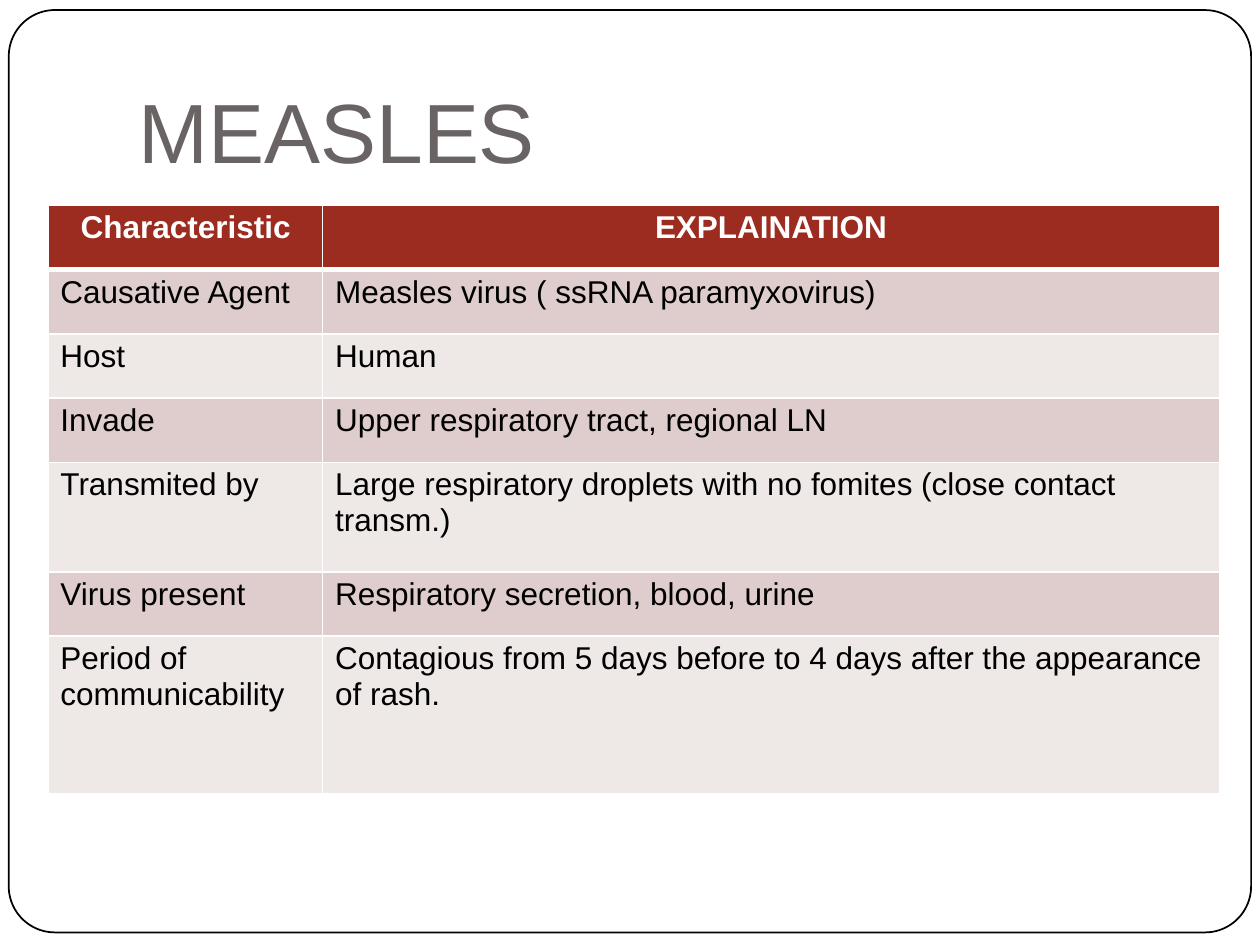
from dataclasses import dataclass
from typing import NamedTuple

from lxml import etree
from pptx import Presentation
from pptx.dml.color import RGBColor
from pptx.enum.shapes import MSO_SHAPE
from pptx.enum.text import PP_ALIGN
from pptx.oxml.ns import qn
from pptx.util import Inches, Pt

ROUNDED = MSO_SHAPE.ROUNDED_RECTANGLE
LEFT, CENTER = PP_ALIGN.LEFT, PP_ALIGN.CENTER


@dataclass(frozen=True)
class Theme:
    font: str = "Arial"
    title_size: float = 48
    body_size: float = 18
    title: str = "696363"
    ink: str = "000000"
    white: str = "FFFFFF"
    header: str = "9B2C1F"
    bands: tuple[str, str] = ("DECDCC", "EEE8E7")
    thin: float = 1
    thick: float = 3


class Row(NamedTuple):
    label: str
    explanation: str
    height: float = 0.51


class CellStyle(NamedTuple):
    fill: str
    color: str
    indent: float = 0.1
    align: PP_ALIGN = LEFT
    bold: bool = False


THEME = Theme()
SLIDE_W, SLIDE_H = 10, 7.5
COLUMNS = (2.18, 7.12)
ROWS = (
    Row("Characteristic", "EXPLAINATION"),
    Row("Causative Agent", "Measles virus ( ssRNA paramyxovirus)"),
    Row("Host", "Human"),
    Row("Invade", "Upper respiratory tract, regional LN"),
    Row("Transmited by",
        "Large respiratory droplets with no fomites (close contact  transm.)", 0.87),
    Row("Virus present", "Respiratory secretion, blood, urine"),
    Row("Period of\ncommunicability",
        "Contagious from 5 days before to 4 days after the appearance\nof rash.", 1.25),
)
HEADER_STYLES = (
    CellStyle(THEME.header, THEME.white, indent=0.26, bold=True),
    CellStyle(THEME.header, THEME.white, indent=0, align=CENTER, bold=True),
)


def write_text(tf, text: str, size: float, color: str, before: float,
               align: PP_ALIGN = LEFT, bold: bool = False) -> None:
    """Write one paragraph per line, with space before the first only."""
    tf.text = text
    for i, p in enumerate(tf.paragraphs):
        p.alignment = align
        p.space_before = Pt(0 if i else before)
        p.font.name = THEME.font
        p.font.size = Pt(size)
        p.font.bold = bold
        p.font.color.rgb = RGBColor.from_string(color)


def set_borders(cell, top: float, bottom: float) -> None:
    """Put white lines round a cell, ahead of its fill as the schema asks."""
    tcPr = cell._tc.get_or_add_tcPr()
    widths = {"a:lnL": THEME.thin, "a:lnR": THEME.thin, "a:lnT": top, "a:lnB": bottom}
    for i, (tag, width) in enumerate(widths.items()):
        ln = etree.Element(qn(tag), w=str(Pt(width)))
        fill = etree.SubElement(ln, qn("a:solidFill"))
        etree.SubElement(fill, qn("a:srgbClr"), val=THEME.white)
        tcPr.insert(i, ln)


def fill_cell(cell, text: str, style: CellStyle) -> None:
    cell.margin_left = Inches(style.indent)
    cell.margin_right = cell.margin_bottom = 0
    cell.margin_top = Inches(0.04)
    cell.fill.solid()
    cell.fill.fore_color.rgb = RGBColor.from_string(style.fill)
    write_text(cell.text_frame, text, THEME.body_size, style.color, 3.1,
               style.align, style.bold)


def add_frame(slide) -> None:
    left, top, width, height = 0.07, 0.08, 9.86, 7.32
    sp = slide.shapes.add_shape(ROUNDED, Inches(left), Inches(top),
                                Inches(width), Inches(height))
    sp.adjustments[0] = 0.05
    sp.shadow.inherit = False
    sp.fill.background()
    sp.line.color.rgb = RGBColor.from_string(THEME.ink)
    sp.line.width = Pt(THEME.thin)


def add_title(slide, text: str) -> None:
    sp = slide.shapes.add_textbox(Inches(1.09), Inches(0.62), Inches(3.18), Inches(0.83))
    tf = sp.text_frame
    tf.word_wrap = True
    tf.margin_left = tf.margin_top = Inches(0.01)
    tf.margin_right = tf.margin_bottom = 0
    write_text(tf, text, THEME.title_size, THEME.title, 1)


def add_table(slide, rows: tuple[Row, ...]) -> None:
    height = sum(row.height for row in rows)
    table = slide.shapes.add_table(len(rows), len(COLUMNS), Inches(0.38), Inches(1.63),
                                   Inches(sum(COLUMNS)), Inches(height)).table
    table.horz_banding = False
    for column, width in zip(table.columns, COLUMNS):
        column.width = Inches(width)
    for r, row in enumerate(rows):
        table.rows[r].height = Inches(row.height)
        body = CellStyle(THEME.bands[(r - 1) % 2], THEME.ink)
        for c, text in enumerate((row.label, row.explanation)):
            cell = table.cell(r, c)
            fill_cell(cell, text, body if r else HEADER_STYLES[c])
            set_borders(cell,
                        top=THEME.thick if r == 1 else THEME.thin,
                        bottom=THEME.thick if r == 0 else THEME.thin)


def main() -> None:
    prs = Presentation()
    prs.slide_width, prs.slide_height = Inches(SLIDE_W), Inches(SLIDE_H)
    slide = prs.slides.add_slide(prs.slide_layouts[6])
    add_frame(slide)
    add_title(slide, "MEASLES")
    add_table(slide, ROWS)
    prs.save("out.pptx")


if __name__ == "__main__":
    main()
